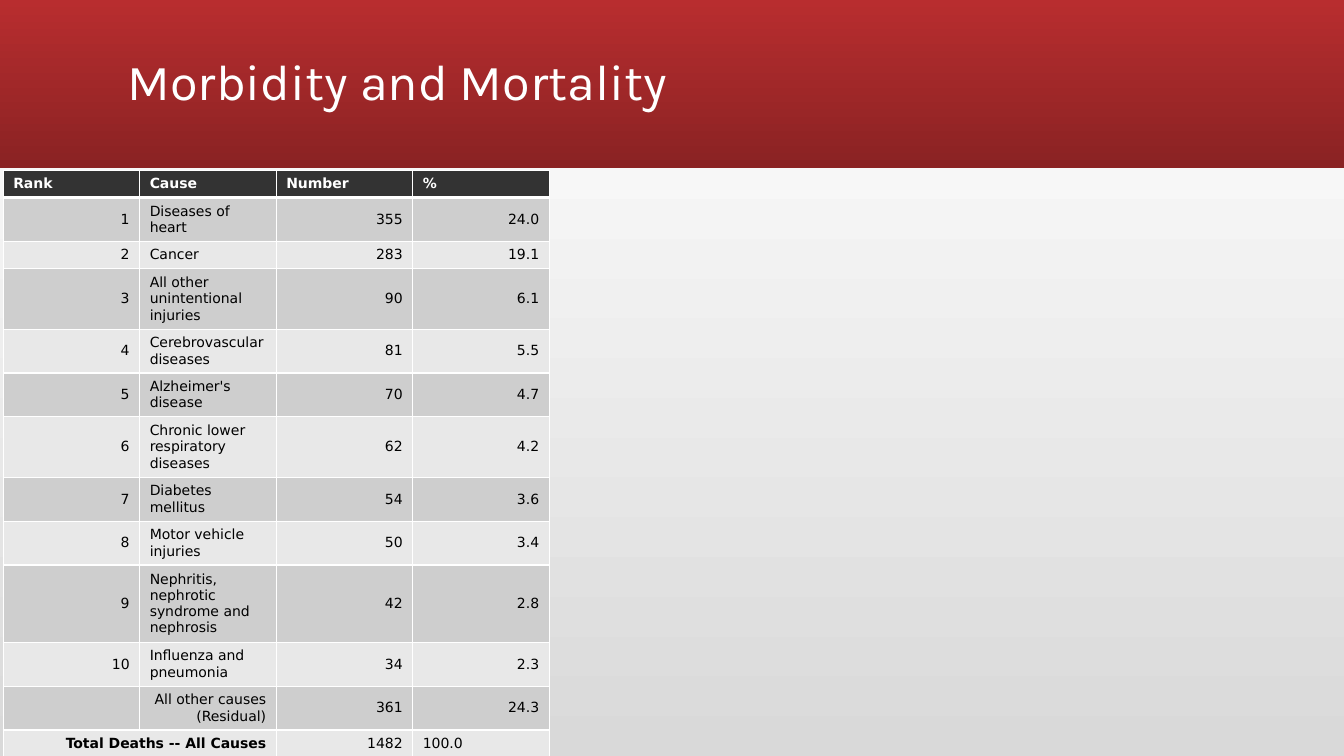
from typing import NamedTuple

import lxml.etree
import pptx
import pptx.dml.color
import pptx.dml.fill
import pptx.enum.shapes
import pptx.enum.text
import pptx.oxml.ns
import pptx.slide
import pptx.table
import pptx.text.text
import pptx.util

Cm = pptx.util.Cm
Pt = pptx.util.Pt
RGBColor = pptx.dml.color.RGBColor
ALIGN = pptx.enum.text.PP_ALIGN
MIDDLE = pptx.enum.text.MSO_ANCHOR.MIDDLE
qn = pptx.oxml.ns.qn

WHITE = RGBColor(0xFF, 0xFF, 0xFF)
BLACK = RGBColor(0x00, 0x00, 0x00)
RED = RGBColor(0xB8, 0x2D, 0x2F)
DARK_RED = RGBColor(0x8A, 0x22, 0x23)
PALE_GREY = RGBColor(0xD9, 0xD9, 0xD9)
HEADER_FILL = RGBColor(0x33, 0x33, 0x33)
BAND_FILLS = (RGBColor(0xCE, 0xCE, 0xCE), RGBColor(0xE8, 0xE8, 0xE8))

# Row height by the number of lines in the cause
ROW_HEIGHTS = {1: Cm(0.69), 2: Cm(0.97), 3: Cm(1.32), 4: Cm(1.7)}


class Row(NamedTuple):
    rank: str
    cause: str
    number: str
    percent: str
    lines: int = 1
    aligns: tuple = (ALIGN.RIGHT, ALIGN.LEFT, ALIGN.RIGHT, ALIGN.RIGHT)


HEADER = Row("Rank", "Cause", "Number", "%", aligns=(ALIGN.LEFT,) * 4)
CAUSES = [
    Row("1", "Diseases of heart", "355", "24.0", 2),
    Row("2", "Cancer", "283", "19.1"),
    Row("3", "All other unintentional injuries", "90", "6.1", 3),
    Row("4", "Cerebrovascular diseases", "81", "5.5", 2),
    Row("5", "Alzheimer's disease", "70", "4.7", 2),
    Row("6", "Chronic lower respiratory diseases", "62", "4.2", 3),
    Row("7", "Diabetes mellitus", "54", "3.6", 2),
    Row("8", "Motor vehicle injuries", "50", "3.4", 2),
    Row("9", "Nephritis, nephrotic syndrome and nephrosis", "42", "2.8", 4),
    Row("10", "Influenza and pneumonia", "34", "2.3", 2),
    Row("", "All other causes (Residual)", "361", "24.3", 2, (ALIGN.RIGHT,) * 4),
]
TOTAL = Row("Total Deaths -- All Causes", "", "1482", "100.0",
            aligns=(ALIGN.RIGHT, ALIGN.RIGHT, ALIGN.RIGHT, ALIGN.LEFT))


def write(tf: pptx.text.text.TextFrame, text: str, *, size: float, font: str,
          color: RGBColor, bold: bool = False, align: ALIGN = ALIGN.LEFT,
          spacing: float = 1.0) -> None:
    p = tf.paragraphs[0]
    p.alignment = align
    p.line_spacing = spacing
    r = p.add_run()
    r.text = text
    r.font.size = Pt(size)
    r.font.name = font
    r.font.bold = bold
    r.font.color.rgb = color


def fill_gradient(fill: pptx.dml.fill.FillFormat, start: RGBColor, end: RGBColor,
                  angle: float) -> None:
    """Fill with two colours; the angle runs counter-clockwise."""
    fill.gradient()
    fill.gradient_angle = angle
    for stop, color, position in zip(fill.gradient_stops, (start, end), (0, 1)):
        stop.color.rgb = color
        stop.position = position


def set_borders(cell: pptx.table._Cell, bottom: float) -> None:
    """Draw white cell borders, 1 pt wide except for the bottom one."""
    tc_pr = cell._tc.get_or_add_tcPr()
    widths = {"a:lnL": 1, "a:lnR": 1, "a:lnT": 1, "a:lnB": bottom}
    for i, (tag, width) in enumerate(widths.items()):
        ln = lxml.etree.Element(qn(tag), w=str(Pt(width)))
        solid = lxml.etree.SubElement(ln, qn("a:solidFill"))
        lxml.etree.SubElement(solid, qn("a:srgbClr"), val=str(WHITE))
        tc_pr.insert(i, ln)


def add_title_band(slide: pptx.slide.Slide, width: int) -> None:
    band = slide.shapes.add_shape(
        pptx.enum.shapes.MSO_SHAPE.RECTANGLE, 0, 0, width, Cm(4.23))
    band.shadow.inherit = False
    band.line.fill.background()
    fill_gradient(band.fill, RED, DARK_RED, 270)

    title = slide.shapes.add_textbox(Cm(2.97), Cm(0.28), Cm(27.94), Cm(3.68))
    tf = title.text_frame
    tf.word_wrap = True
    tf.vertical_anchor = MIDDLE
    write(tf, "Morbidity and Mortality", size=36, font="Karla", color=WHITE,
          spacing=0.9)


def add_deaths_table(slide: pptx.slide.Slide) -> None:
    rows = [HEADER, *CAUSES, TOTAL]
    height = Cm(14.76)
    frame = slide.shapes.add_table(
        len(rows), 4, Cm(0.08), Cm(4.29), Cm(13.76), height)
    table = frame.table
    for i, row in enumerate(rows):
        table.rows[i].height = ROW_HEIGHTS[row.lines]
        is_header = row is HEADER
        for j, (text, align) in enumerate(zip(row[:4], row.aligns)):
            cell = table.cell(i, j)
            cell.vertical_anchor = MIDDLE
            cell.fill.solid()
            cell.fill.fore_color.rgb = HEADER_FILL if is_header else BAND_FILLS[(i - 1) % 2]
            set_borders(cell, bottom=3 if is_header else 1)
            write(cell.text_frame, text, size=10, font="DejaVu Sans",
                  color=WHITE if is_header else BLACK,
                  bold=is_header or (row is TOTAL and j == 0), align=align)
    last = len(rows) - 1
    table.cell(last, 0).merge(table.cell(last, 1))
    frame.height = height


def main() -> None:
    prs = pptx.Presentation()
    prs.slide_width, prs.slide_height = Cm(33.87), Cm(19.05)
    slide = prs.slides.add_slide(prs.slide_layouts[6])
    fill_gradient(slide.background.fill, PALE_GREY, WHITE, 90)
    add_title_band(slide, prs.slide_width)
    add_deaths_table(slide)
    prs.save("out.pptx")


if __name__ == "__main__":
    main()
